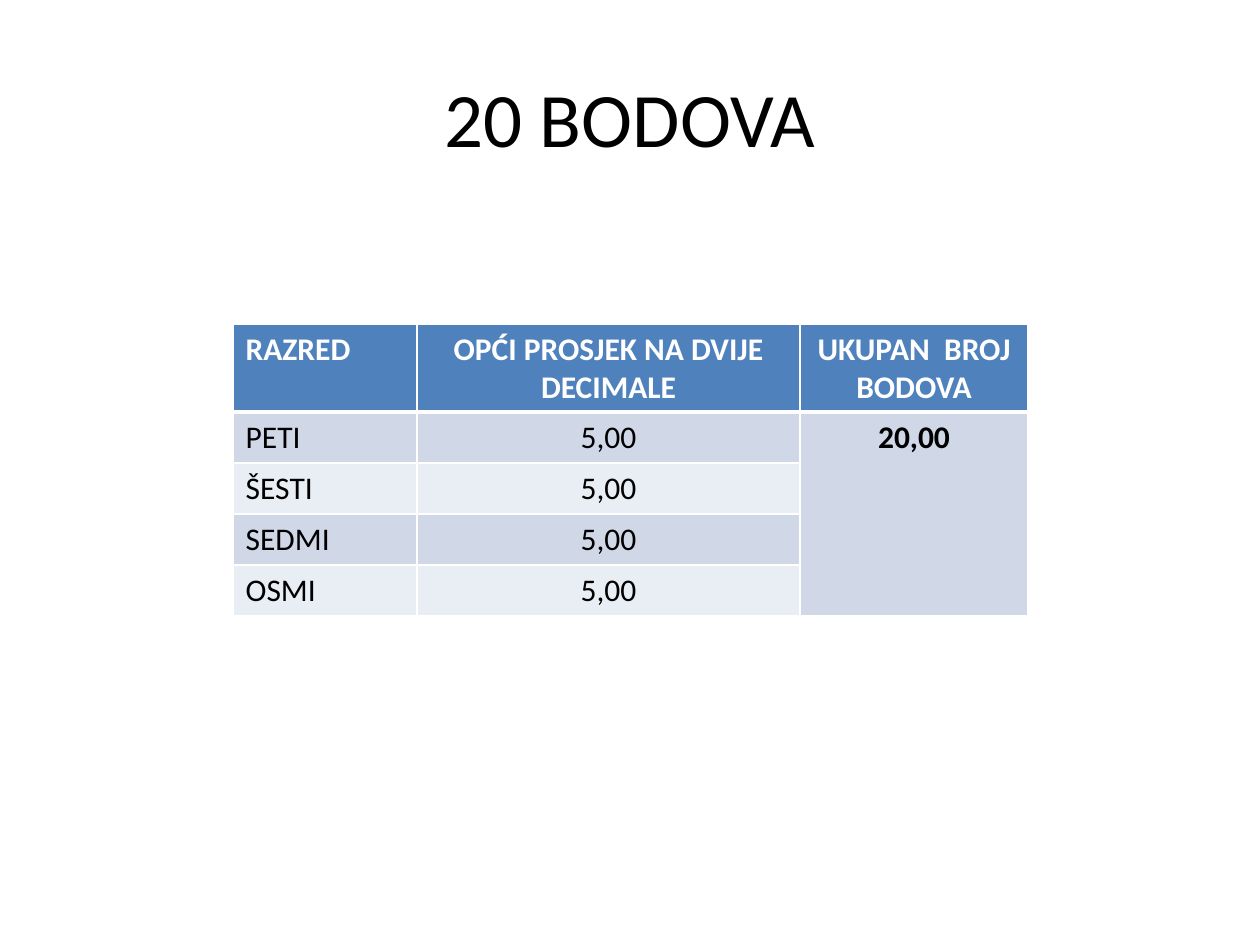
from dataclasses import dataclass

from lxml import etree
from pptx import Presentation
from pptx.dml.color import RGBColor
from pptx.enum.text import MSO_ANCHOR, PP_ALIGN
from pptx.oxml.ns import qn
from pptx.util import Inches, Pt

LEFT, CENTER = PP_ALIGN.LEFT, PP_ALIGN.CENTER
MIDDLE = MSO_ANCHOR.MIDDLE


@dataclass(frozen=True)
class Theme:
    font: str = "Calibri"
    ink: str = "000000"
    white: str = "FFFFFF"
    head: str = "4F81BD"
    bands: tuple = ("D0D8E8", "E9EDF4")
    title: int = 44
    body: int = 18
    thin: int = 1
    thick: int = 3


THEME = Theme()
HEADS = ("RAZRED", "OPĆI PROSJEK NA DVIJE DECIMALE", "UKUPAN  BROJ BODOVA")
GRADES = (("PETI", "5,00"), ("ŠESTI", "5,00"), ("SEDMI", "5,00"), ("OSMI", "5,00"))
TOTAL = "20,00"
WIDTHS = (1.46, 3.04, 1.81)
HEAD_H = 0.7


def write(frame, text, size, color, align, bold=False):
    para = frame.paragraphs[0]
    para.alignment = align
    run = para.add_run()
    run.text = text
    look = {"name": THEME.font, "size": Pt(size), "bold": bold}
    for key, value in look.items():
        setattr(run.font, key, value)
    run.font.color.rgb = RGBColor.from_string(color)


def paint(cell, fill, base):
    """Fill a cell and rule its four sides; base is the bottom line width."""
    props = cell._tc.get_or_add_tcPr()
    sides = {"a:lnL": THEME.thin, "a:lnR": THEME.thin, "a:lnT": THEME.thin, "a:lnB": base}
    for tag, width in sides.items():
        line = etree.SubElement(props, qn(tag), w=str(Pt(width)))
        solid = etree.SubElement(line, qn("a:solidFill"))
        etree.SubElement(solid, qn("a:srgbClr"), val=THEME.white)
    cell.fill.solid()
    cell.fill.fore_color.rgb = RGBColor.from_string(fill)


def add_title(slide, box):
    frame = slide.shapes.add_textbox(*map(Inches, box)).text_frame
    frame.word_wrap = True
    frame.vertical_anchor = MIDDLE
    write(frame, "20 BODOVA", THEME.title, THEME.ink, CENTER)


def add_grid(slide, box):
    rows = [HEADS] + [(*grade, "") for grade in GRADES]
    rows[1] = (*GRADES[0], TOTAL)
    grid = slide.shapes.add_table(len(rows), len(HEADS), *map(Inches, box)).table

    # Column widths and row heights
    for col, width in zip(grid.columns, WIDTHS):
        col.width = Inches(width)
    row_h = (box[3] - HEAD_H) / len(GRADES)
    for i, row in enumerate(grid.rows):
        row.height = Inches(row_h if i else HEAD_H)

    # One total spans all grades
    last = len(HEADS) - 1
    grid.cell(1, last).merge(grid.cell(len(GRADES), last))

    # Cells
    for i, row in enumerate(rows):
        for j, text in enumerate(row):
            cell = grid.cell(i, j)
            head = i == 0
            fill = THEME.head if head else THEME.bands[(i - 1) % 2]
            paint(cell, fill, THEME.thick if head else THEME.thin)
            if text:
                write(cell.text_frame, text, THEME.body,
                      THEME.white if head else THEME.ink,
                      CENTER if j else LEFT, head or j == last)
        if i == 1:  # the header rule is shared with the row below
            for cell in grid.rows[i].cells:
                top = cell._tc.tcPr.find(qn("a:lnT"))
                top.set("w", str(Pt(THEME.thick)))


def main():
    deck = Presentation()
    deck.slide_width, deck.slide_height = Inches(10), Inches(7.5)
    slide = deck.slides.add_slide(deck.slide_layouts[6])
    add_title(slide, (0.5, 0.3, 9, 1.25))
    add_grid(slide, (1.85, 2.57, sum(WIDTHS), 2.32))
    deck.save("out.pptx")


if __name__ == "__main__":
    main()
